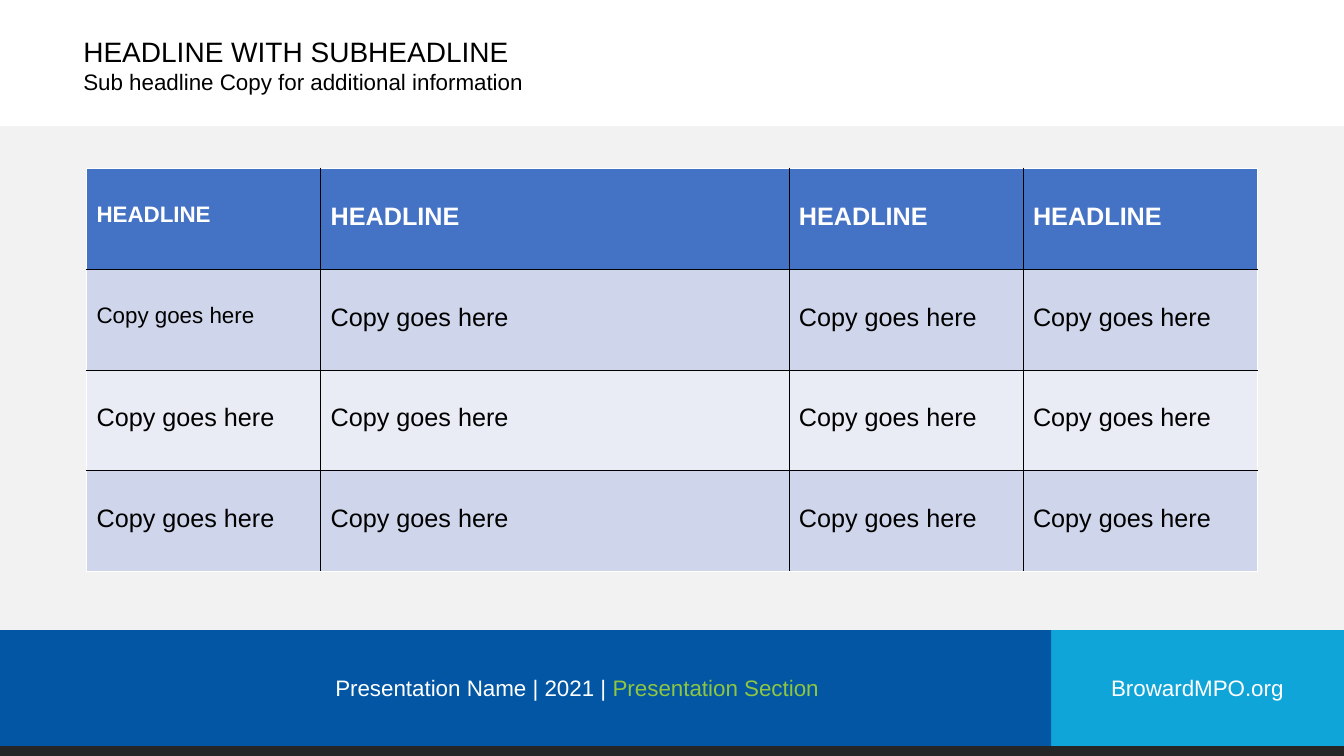
from dataclasses import dataclass

from lxml.etree import SubElement
from pptx import Presentation
from pptx.dml.color import RGBColor
from pptx.enum.shapes import MSO_SHAPE
from pptx.enum.text import PP_ALIGN
from pptx.oxml.ns import qn
from pptx.util import Cm, Pt


@dataclass(frozen=True)
class Theme:
    font: str = "Arial"
    black: str = "000000"
    white: str = "FFFFFF"
    panel: str = "F2F2F2"
    navy: str = "0256A3"
    cyan: str = "10A5D8"
    green: str = "8EC641"
    base: str = "262626"
    header: str = "4472C4"
    bands: tuple = ("CFD5EA", "E9EBF5")
    title: int = 20
    body: int = 18
    small: int = 16
    rule: float = 0.5


class Deck:
    def __init__(self, theme):
        self.t = theme
        self.prs = Presentation()
        self.prs.slide_width, self.prs.slide_height = Cm(33.87), Cm(19.05)
        self.s = self.prs.slides.add_slide(self.prs.slide_layouts[6])

    def block(self, x, y, w, h, color):
        sp = self.s.shapes.add_shape(MSO_SHAPE.RECTANGLE, Cm(x), Cm(y), Cm(w), Cm(h))
        sp.shadow.inherit = False
        sp.fill.solid()
        sp.fill.fore_color.rgb = RGBColor.from_string(color)
        sp.line.fill.background()

    def run(self, p, text, size, color, bold=False):
        r = p.add_run()
        r.text = text
        r.font.name = self.t.font
        r.font.size = Pt(size)
        r.font.bold = bold
        r.font.color.rgb = RGBColor.from_string(color)

    def text(self, x, y, w, h, paragraphs, align=PP_ALIGN.LEFT):
        tf = self.s.shapes.add_textbox(Cm(x), Cm(y), Cm(w), Cm(h)).text_frame
        tf.word_wrap = True
        for i, runs in enumerate(paragraphs):
            p = tf.add_paragraph() if i else tf.paragraphs[0]
            p.alignment = align
            for run in runs:
                self.run(p, *run)

    def borders(self, cell, sides):
        tc_pr = cell._tc.get_or_add_tcPr()
        for side in sides:
            ln = SubElement(tc_pr, qn(f"a:ln{side}"), w=str(Pt(self.t.rule)))
            fill = SubElement(ln, qn("a:solidFill"))
            SubElement(fill, qn("a:srgbClr"), val=self.t.black)

    def table(self, x, y, widths, row_height, rows):
        t = self.t
        last_row, last_col = len(rows) - 1, len(widths) - 1
        frame = self.s.shapes.add_table(len(rows), len(widths), Cm(x), Cm(y),
                                        Cm(sum(widths)), Cm(row_height * len(rows)))
        tbl = frame.table
        for column, width in zip(tbl.columns, widths):
            column.width = Cm(width)
        for i, row in enumerate(rows):
            tbl.rows[i].height = Cm(row_height)
            for j, text in enumerate(row):
                cell = tbl.cell(i, j)
                cell.margin_top = Cm(0.86)
                inner = {"L": j > 0, "R": j < last_col, "T": i > 0, "B": i < last_row}
                self.borders(cell, [side for side, shown in inner.items() if shown])
                cell.fill.solid()
                fill = t.bands[(i - 1) % 2] if i else t.header
                cell.fill.fore_color.rgb = RGBColor.from_string(fill)
                size = t.small if j == 0 and i < 2 else t.body
                self.run(cell.text_frame.paragraphs[0], text, size,
                         t.black if i else t.white, i == 0)


def main():
    t = Theme()
    deck = Deck(t)
    deck.block(0, 3.18, 33.87, 15.87, t.panel)
    deck.block(24.26, 15.88, 9.61, 3.17, t.cyan)
    deck.block(0, 15.88, 26.49, 2.92, t.navy)
    deck.block(0, 18.8, 33.87, 0.25, t.base)
    deck.text(26.49, 16.87, 7.37, 0.94,
              [[("BrowardMPO.org", t.small, t.white)]], PP_ALIGN.CENTER)
    rows = [["HEADLINE"] * 4] + [["Copy goes here"] * 4] * 3
    deck.table(2.18, 4.24, [5.9, 11.8, 5.9, 5.9], 2.54, rows)
    deck.text(1.85, 0.74, 28.63, 1.8, [
        [("HEADLINE WITH SUBHEADLINE", t.title, t.black)],
        [("Sub headline Copy for additional information", t.small, t.black)],
    ])
    deck.text(8.2, 16.87, 14.99, 0.94, [[
        ("Presentation Name | 2021 | ", t.small, t.white),
        ("Presentation Section", t.small, t.green),
    ]])
    deck.prs.save("out.pptx")


if __name__ == "__main__":
    main()
